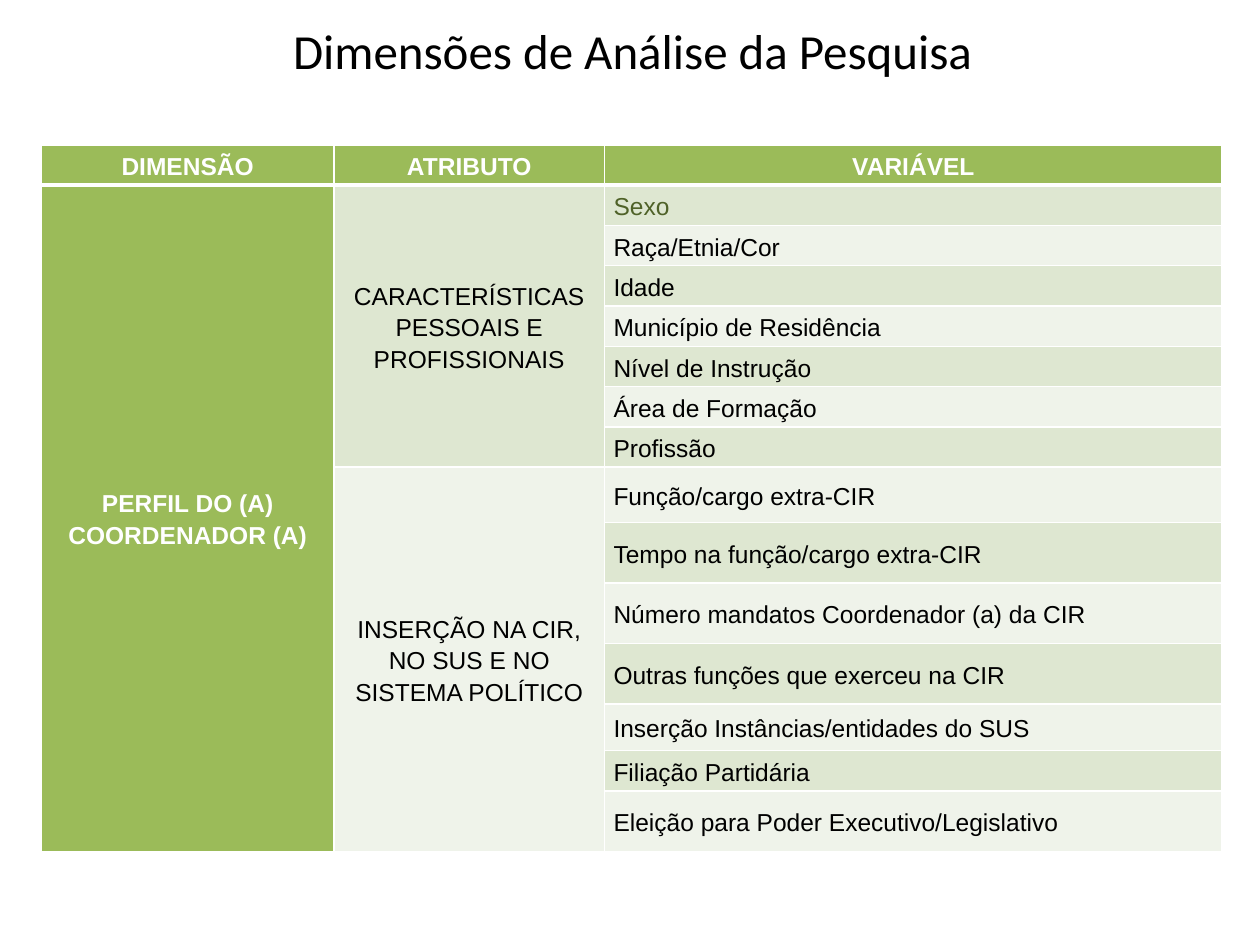
from lxml.etree import SubElement
from pptx import Presentation
from pptx.dml.color import RGBColor
from pptx.enum.text import MSO_ANCHOR, PP_ALIGN
from pptx.oxml.ns import qn
from pptx.util import Inches, Pt

WHITE = RGBColor(0xFF, 0xFF, 0xFF)
BLACK = RGBColor(0, 0, 0)
GREEN = RGBColor(0x9B, 0xBB, 0x59)
DARK_GREEN = RGBColor(0x4F, 0x62, 0x28)
BANDS = [RGBColor(0xDE, 0xE7, 0xD1), RGBColor(0xEF, 0xF3, 0xEA)]

TITLE = "Dimensões de Análise da Pesquisa"
HEADERS = ["DIMENSÃO", "ATRIBUTO", "VARIÁVEL"]
DIMENSION = "PERFIL DO (A) COORDENADOR (A)"
ATTRIBUTES = {
    "CARACTERÍSTICAS PESSOAIS E PROFISSIONAIS": [
        ("Sexo", 0.32),
        ("Raça/Etnia/Cor", 0.32),
        ("Idade", 0.32),
        ("Município de Residência", 0.32),
        ("Nível de Instrução", 0.32),
        ("Área de Formação", 0.32),
        ("Profissão", 0.32),
    ],
    "INSERÇÃO NA CIR, NO SUS E NO SISTEMA POLÍTICO": [
        ("Função/cargo extra-CIR", 0.44),
        ("Tempo na função/cargo extra-CIR", 0.48),
        ("Número mandatos Coordenador (a) da CIR", 0.48),
        ("Outras funções que exerceu na CIR", 0.48),
        ("Inserção Instâncias/entidades do SUS", 0.37),
        ("Filiação Partidária", 0.32),
        ("Eleição para Poder Executivo/Legislativo", 0.48),
    ],
}
COLUMN_WIDTHS = [2.32, 2.15, 4.9]
HEADER_HEIGHT = 0.32
CELL_FORMAT = {
    "vertical_anchor": MSO_ANCHOR.MIDDLE,
    "margin_left": Inches(0.07),
    "margin_right": Inches(0.07),
    "margin_top": 0,
    "margin_bottom": 0,
}


def set_attributes(target, values):
    """Set every named attribute on the target."""
    for name, value in values.items():
        setattr(target, name, value)


def write_text(frame, text, font, size, color, align, bold=False, spacing=1.0):
    """Write one formatted paragraph in a text frame."""
    para = frame.paragraphs[0]
    set_attributes(para, {"alignment": align, "line_spacing": spacing})
    span = para.add_run()
    span.text = text
    set_attributes(span.font, {"name": font, "size": Pt(size), "bold": bold})
    span.font.color.rgb = color


def paint_cell(cell, fill, bottom_width=1):
    """Give a cell its fill, margins and white borders."""
    set_attributes(cell, CELL_FORMAT)
    cell.fill.solid()
    cell.fill.fore_color.rgb = fill
    properties = cell._tc.get_or_add_tcPr()
    widths = {"lnL": 1, "lnR": 1, "lnT": 1, "lnB": bottom_width}
    for index, (side, width) in enumerate(widths.items()):
        line = SubElement(properties, qn(f"a:{side}"), w=str(Pt(width)))
        solid = SubElement(line, qn("a:solidFill"))
        SubElement(solid, qn("a:srgbClr"), val=str(WHITE))
        properties.insert(index, line)


def write_cell(cell, text, color, align=PP_ALIGN.CENTER, bold=False):
    """Write the text of a table cell."""
    write_text(cell.text_frame, text, "Arial", 14, color, align, bold, 1.15)


def add_title(page, left, top, width, height):
    """Place the centred title in the given box."""
    box = page.shapes.add_textbox(left, top, width, height)
    box.text_frame.word_wrap = True
    write_text(box.text_frame, TITLE, "Calibri", 28, BLACK, PP_ALIGN.CENTER)


def add_dimension_table(page, left, top, width, height):
    """Place the table of dimension, attributes and variables."""
    variables = [item for group in ATTRIBUTES.values() for item in group]
    table = page.shapes.add_table(
        len(variables) + 1, len(HEADERS), left, top, width, height
    ).table
    for column, column_width in zip(table.columns, COLUMN_WIDTHS):
        column.width = Inches(column_width)
    table.rows[0].height = Inches(HEADER_HEIGHT)

    for column, header in enumerate(HEADERS):
        cell = table.cell(0, column)
        paint_cell(cell, GREEN, bottom_width=3)
        write_cell(cell, header, WHITE, bold=True)

    for row, (variable, row_height) in enumerate(variables, 1):
        table.rows[row].height = Inches(row_height)
        cell = table.cell(row, 2)
        paint_cell(table.cell(row, 0), GREEN)
        paint_cell(cell, BANDS[(row - 1) % 2])
        color = DARK_GREEN if row == 1 else BLACK
        write_cell(cell, variable, color, PP_ALIGN.LEFT)

    table.cell(1, 0).merge(table.cell(len(variables), 0))
    write_cell(table.cell(1, 0), DIMENSION, WHITE, bold=True)

    first = 1
    for (attribute, group), band in zip(ATTRIBUTES.items(), BANDS):
        last = first + len(group) - 1
        for row in range(first, last + 1):
            paint_cell(table.cell(row, 1), band)
        table.cell(first, 1).merge(table.cell(last, 1))
        write_cell(table.cell(first, 1), attribute, BLACK)
        first = last + 1


def main():
    """Build the slide and save the deck."""
    deck = Presentation()
    set_attributes(deck, {"slide_width": Inches(10), "slide_height": Inches(7.5)})
    page = deck.slides.add_slide(deck.slide_layouts[6])
    add_title(page, Inches(1.28), Inches(0.11), Inches(7.48), Inches(0.57))
    add_dimension_table(page, Inches(0.33), Inches(1.15), Inches(9.37), Inches(5.59))
    deck.save("out.pptx")


if __name__ == "__main__":
    main()
